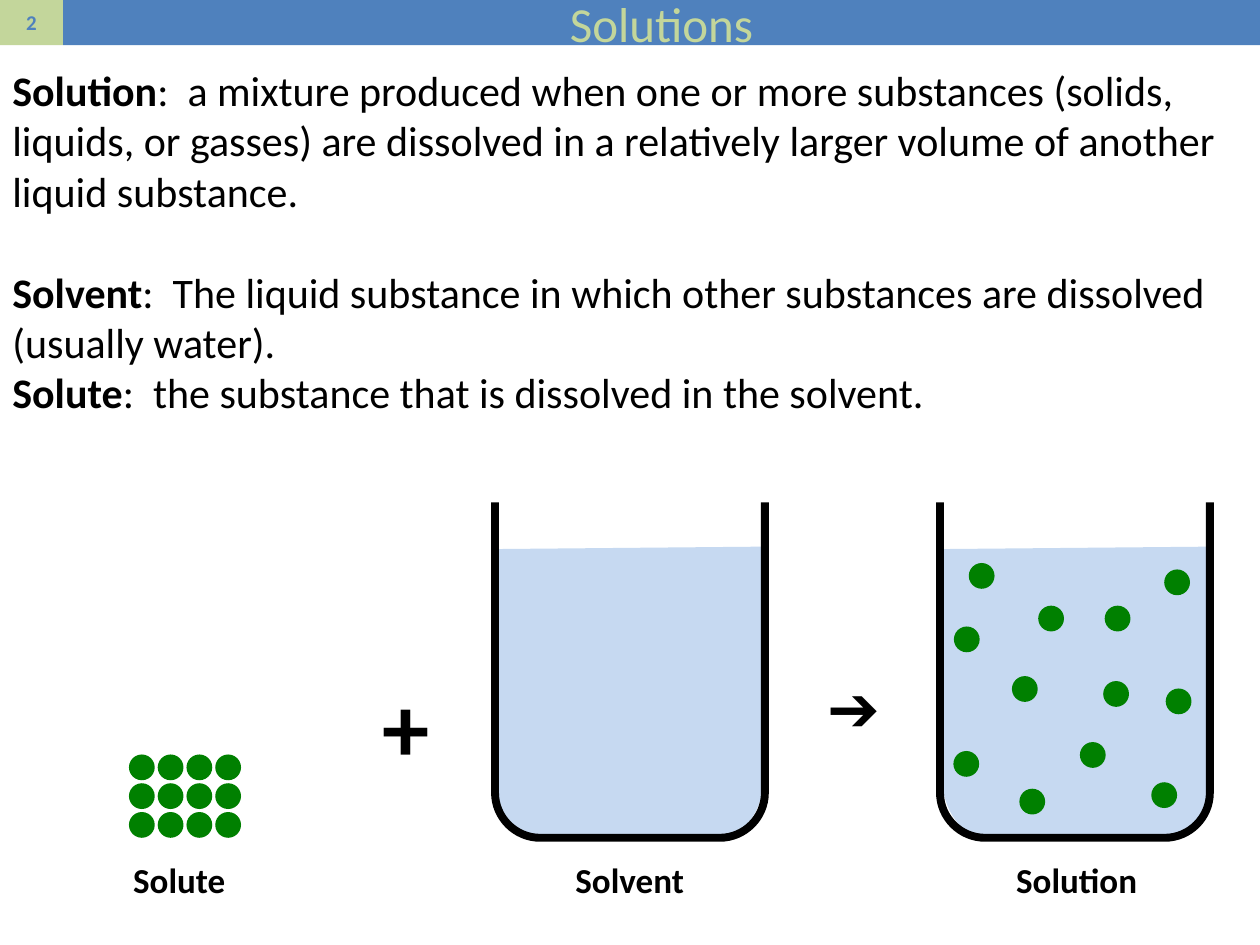
"""Build the slide that explains solution, solvent and solute."""
from pptx import Presentation, util as u
from pptx.dml.color import RGBColor
from pptx.enum import shapes, text
from pptx.oxml import ns

BLUE = RGBColor(0x4F, 0x81, 0xBD)
LIME = RGBColor(0xC3, 0xD6, 0x9B)
WATER = RGBColor(0xC6, 0xD9, 0xF1)
GREEN = RGBColor(0x00, 0x80, 0x00)
BLACK = RGBColor(0, 0, 0)
FONT = "Calibri"
DOT = 0.52
BEND = 0.55


def style(run, size, color, bold):
    run.font.name = FONT
    run.font.size = u.Pt(size)
    run.font.color.rgb = color
    run.font.bold = bold


def cup(group, left, width, rims, turn, base, radius, inset):
    right = left + width
    low, high = left + inset, right - inset
    pull, drop = radius * (1 - BEND), turn + BEND * (base - turn)
    points = [(right, rims[1]), (high, turn),
              (high, drop), (high - pull, base), (high - radius, base),
              (low + radius, base),
              (low + pull, base), (low, drop), (low, turn),
              (left, rims[0])]
    points = [(u.Cm(x), u.Cm(y)) for x, y in points]
    pen = group.shapes.build_freeform(*points[0])
    pen.add_line_segments(points[1:], close=False)
    shape = pen.convert_to_shape()
    shape.shadow.inherit = False
    lines = shape.element.xpath(".//a:lnTo")
    for first in (1, 5):
        curve = lines[first]
        curve.tag = ns.qn("a:cubicBezTo")
        for line in lines[first + 1:first + 3]:
            curve.append(line[0])
            line.getparent().remove(line)
    return shape


deck = Presentation()
deck.slide_width, deck.slide_height = u.Cm(25.4), u.Cm(19.05)
slide = deck.slides.add_slide(deck.slide_layouts[5])

title = slide.shapes.title
title.left, title.top = u.Cm(1.27), u.Cm(0)
title.width, title.height = u.Cm(24.13), u.Cm(0.91)
badge = slide.shapes.add_shape(
    shapes.MSO_SHAPE.RECTANGLE, 0, 0, u.Cm(1.27), u.Cm(0.91))
badge.shadow.inherit = False
for bar, words, size, fill, ink, bold in (
        (title, "Solutions", 28, BLUE, LIME, False),
        (badge, "2", 12, LIME, BLUE, True)):
    bar.fill.solid()
    bar.fill.fore_color.rgb = fill
    bar.line.fill.background()
    frame = bar.text_frame
    frame.text = words
    frame.auto_size = text.MSO_AUTO_SIZE.NONE
    frame.vertical_anchor = text.MSO_ANCHOR.MIDDLE
    frame.paragraphs[0].alignment = text.PP_ALIGN.CENTER
    style(frame.paragraphs[0].runs[0], size, ink, bold)

terms = (
    ("Solution", ":  a mixture produced when one or more substances (solids, "
     "liquids, or gasses) are dissolved in a relatively larger volume of "
     "another liquid substance.", 29),
    ("Solvent", ":  The liquid substance in which other substances are "
     "dissolved (usually water).", 0),
    ("Solute", ":  the substance that is dissolved in the solvent.", 0),
)
body = slide.shapes.add_textbox(0, u.Cm(1.17), u.Cm(25.4), u.Cm(7.44))
frame = body.text_frame
frame.word_wrap = True
for index, (term, sense, gap) in enumerate(terms):
    para = frame.add_paragraph() if index else frame.paragraphs[0]
    para.text = term
    para.space_after = u.Pt(gap)
    para.add_run().text = sense
    for run, bold in zip(para.runs, (True, False)):
        style(run, 24, BLACK, bold)

for words, left, top, width, height, size in (
        ("+", 7.37, 13.35, 1.63, 2.57, 54),
        ("➔", 16.39, 13.36, 1.63, 1.8, 36),
        ("Solute ", 0.76, 17.18, 5.87, 1.12, 20),
        ("Solvent", 9.76, 17.18, 5.87, 1.12, 20),
        ("Solution", 18.77, 17.18, 5.87, 1.12, 20)):
    box = slide.shapes.add_textbox(
        u.Cm(left), u.Cm(top), u.Cm(width), u.Cm(height))
    box.text_frame.word_wrap = True
    para = box.text_frame.paragraphs[0]
    para.text = words
    para.alignment = text.PP_ALIGN.CENTER
    style(para.runs[0], size, BLACK, True)

solvent, mix, solute = [slide.shapes.add_group_shape() for _ in range(3)]
for group, pool, wall in ((solvent, 9.93, 9.98), (mix, 18.95, 18.95)):
    fluid = cup(group, pool, 5.51, (11.07, 11.02), 15.65, 16.89, 0.91, 0.04)
    fluid.fill.solid()
    fluid.fill.fore_color.rgb = WATER
    fluid.line.fill.background()
    glass = cup(group, wall, 5.44, (10.13, 10.13), 15.98, 16.89, 0.91, 0)
    glass.fill.background()
    glass.line.color.rgb = BLACK
    glass.line.width = u.Pt(4.5)

stack = [(2.6 + 0.58 * col, 15.21 + 0.58 * row)
         for row in range(3) for col in range(4)]
spread = [
    (21.77, 14.96), (19.22, 15.14), (20.55, 15.9), (22.24, 13.73),
    (19.23, 12.63), (20.4, 13.63), (22.27, 12.21), (19.53, 11.35),
    (20.93, 12.21), (23.21, 15.77), (23.5, 13.88), (23.47, 11.48),
]
for group, spots in ((mix, spread), (solute, stack)):
    for left, top in spots:
        dot = group.shapes.add_shape(
            shapes.MSO_SHAPE.OVAL, u.Cm(left), u.Cm(top), u.Cm(DOT), u.Cm(DOT))
        dot.shadow.inherit = False
        dot.fill.solid()
        dot.fill.fore_color.rgb = GREEN
        dot.line.fill.background()

deck.save("out.pptx")
